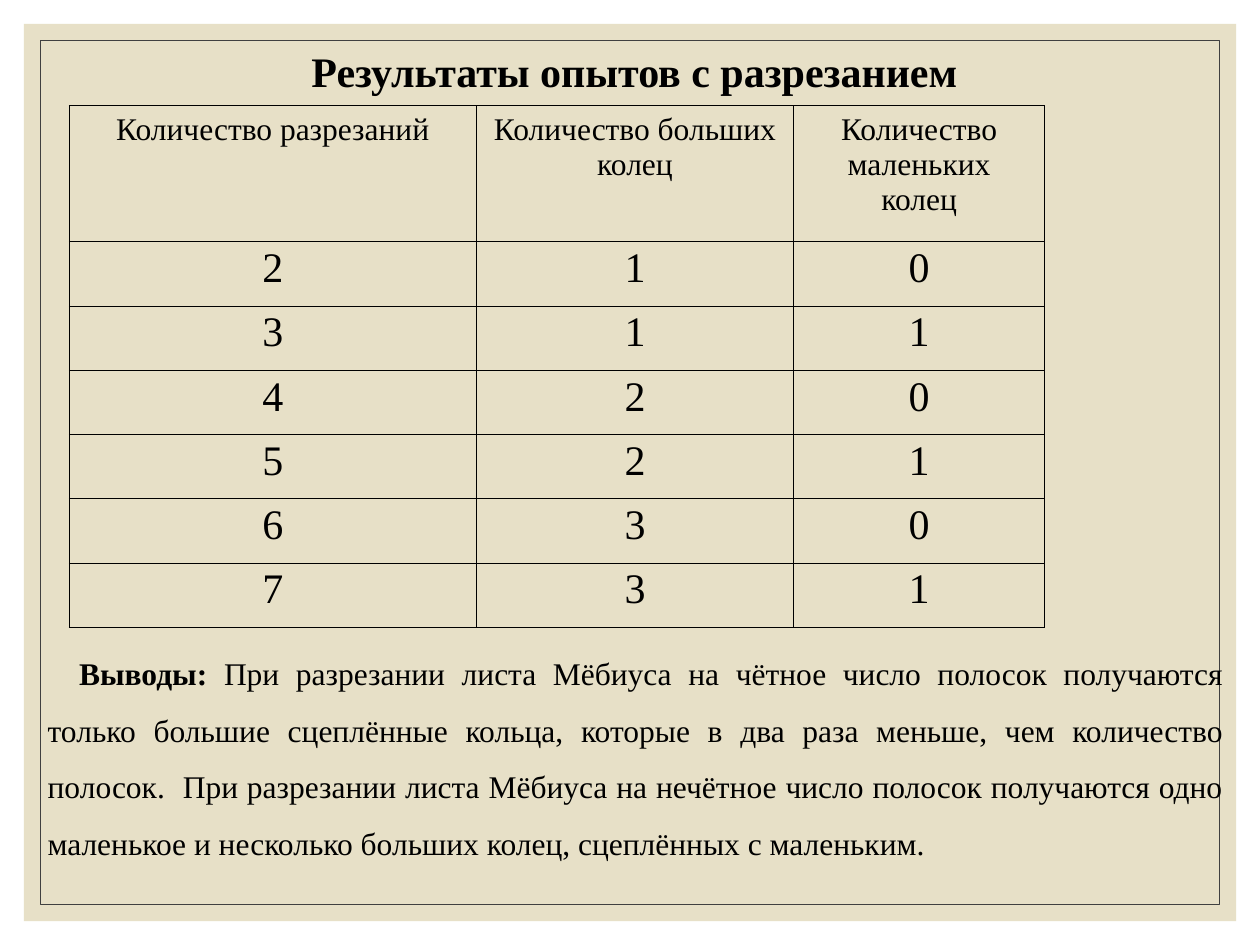
from lxml import etree
from pptx import Presentation
from pptx.dml.color import RGBColor
from pptx.enum.shapes import MSO_SHAPE
from pptx.enum.text import MSO_ANCHOR, PP_ALIGN
from pptx.oxml.ns import qn
from pptx.util import Inches, Pt

RECTANGLE = MSO_SHAPE.RECTANGLE
MIDDLE = MSO_ANCHOR.MIDDLE
TOP = MSO_ANCHOR.TOP
CENTER = PP_ALIGN.CENTER
JUSTIFY = PP_ALIGN.JUSTIFY

BLACK = RGBColor(0x00, 0x00, 0x00)
BEIGE = RGBColor(0xE7, 0xE0, 0xC7)
GRAY = RGBColor(0x40, 0x40, 0x40)
FONT = "Times New Roman"
TITLE_ONLY = 5

TITLE = "Результаты опытов с разрезанием"
HEADERS = ["Количество разрезаний", "Количество больших колец", "Количество маленьких колец"]
RESULTS = [(cuts, cuts // 2, cuts % 2) for cuts in range(2, 8)]
COLUMN_WIDTHS = [3.23, 2.52, 1.99]
HEADER_HEIGHT = 1.08
ROW_HEIGHT = 0.51
CONCLUSION_LABEL = "Выводы: "
CONCLUSION = (
    "При разрезании листа Мёбиуса на чётное число полосок получаются только большие "
    "сцеплённые кольца, которые в два раза меньше, чем количество полосок.  "
    "При разрезании листа Мёбиуса на нечётное число полосок получаются одно маленькое "
    "и несколько больших колец, сцеплённых с маленьким."
)


def add_span(para, text, size, bold=False):
    span = para.add_run()
    span.text = text
    span.font.name = FONT
    span.font.size = Pt(size)
    span.font.bold = bold
    span.font.color.rgb = BLACK


def add_frame(slide, left, top, width, height, fill=None, line=None):
    frame = slide.shapes.add_shape(
        RECTANGLE, Inches(left), Inches(top), Inches(width), Inches(height))
    frame.shadow.inherit = False
    if fill is None:
        frame.fill.background()
    else:
        frame.fill.solid()
        frame.fill.fore_color.rgb = fill
    if line is None:
        frame.line.fill.background()
    else:
        frame.line.color.rgb = line
        frame.line.width = Pt(0.5)


def set_title(slide):
    title = slide.shapes.title
    title.left, title.top = Inches(0.56), Inches(0.36)
    title.width, title.height = Inches(8.95), Inches(0.47)
    title.text_frame.vertical_anchor = MIDDLE
    para = title.text_frame.paragraphs[0]
    para.alignment = CENTER
    para.line_spacing = 0.8
    add_span(para, TITLE, 24, bold=True)
    slide.shapes.element.append(title.element)


def set_borders(cell):
    properties = cell._tc.get_or_add_tcPr()
    for position, side in enumerate(("a:lnL", "a:lnR", "a:lnT", "a:lnB")):
        border = etree.Element(qn(side), w=str(Pt(0.75)))
        fill = etree.SubElement(border, qn("a:solidFill"))
        etree.SubElement(fill, qn("a:srgbClr"), val=str(BLACK))
        properties.insert(position, border)


def fill_cell(cell, text, is_header):
    cell.fill.background()
    set_borders(cell)
    cell.vertical_anchor = TOP
    para = cell.text_frame.paragraphs[0]
    para.alignment = CENTER
    if not is_header:
        cell.margin_left = cell.margin_right = Inches(0.07)
        cell.margin_top = cell.margin_bottom = 0
        para.line_spacing = 1.07
    add_span(para, text, 18 if is_header else 24)


def add_results_table(slide):
    rows = [HEADERS] + RESULTS
    heights = [HEADER_HEIGHT] + [ROW_HEIGHT] * len(RESULTS)
    table = slide.shapes.add_table(
        len(rows), len(HEADERS), Inches(0.55), Inches(0.84),
        Inches(sum(COLUMN_WIDTHS)), Inches(sum(heights))).table
    for column, width in zip(table.columns, COLUMN_WIDTHS):
        column.width = Inches(width)
    for index, values in enumerate(rows):
        table.rows[index].height = Inches(heights[index])
        for cell, value in zip(table.rows[index].cells, values):
            fill_cell(cell, str(value), index == 0)


def add_conclusion(slide):
    box = slide.shapes.add_textbox(Inches(0.28), Inches(4.99), Inches(9.53), Inches(1.92))
    box.text_frame.word_wrap = True
    para = box.text_frame.paragraphs[0]
    para.alignment = JUSTIFY
    para.line_spacing = 1.5
    para.space_before = para.space_after = Pt(14)
    para._p.get_or_add_pPr().set("indent", str(Inches(0.25)))
    add_span(para, CONCLUSION_LABEL, 18, bold=True)
    add_span(para, CONCLUSION, 18)


def main():
    deck = Presentation()
    deck.slide_width, deck.slide_height = Inches(10), Inches(7.5)
    page = deck.slides.add_slide(deck.slide_layouts[TITLE_ONLY])
    add_frame(page, 0.19, 0.19, 9.62, 7.12, fill=BEIGE)
    add_frame(page, 0.32, 0.32, 9.36, 6.86, line=GRAY)
    set_title(page)
    add_results_table(page)
    add_conclusion(page)
    deck.save("out.pptx")


if __name__ == "__main__":
    main()
